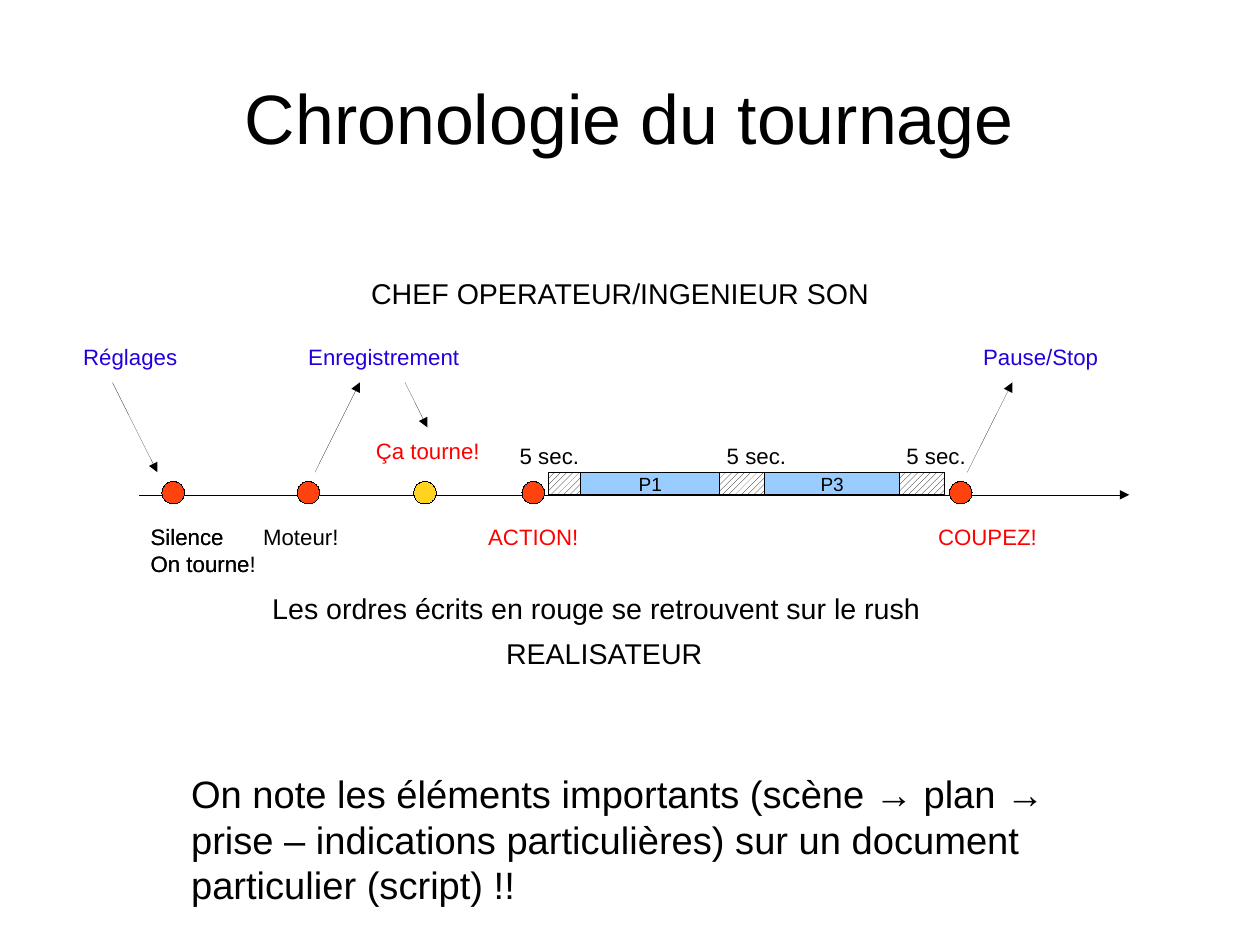
from pptx import Presentation
from pptx.dml.color import RGBColor
from pptx.enum.dml import MSO_PATTERN
from pptx.enum.shapes import MSO_CONNECTOR, MSO_SHAPE
from pptx.enum.text import MSO_ANCHOR, PP_ALIGN
from pptx.oxml.ns import qn
from pptx.util import Pt
from lxml import etree

COLORS = {
    "black": "000000",
    "white": "FFFFFF",
    "red": "FF0000",
    "blue": "2300DC",
    "take": "99CCFF",
    "order": "FF420E",
    "rolling": "FFD320",
}
RGB = {name: RGBColor.from_string(value) for name, value in COLORS.items()}

prs = Presentation()
prs.slide_width, prs.slide_height = Pt(793.7), Pt(595.28)
s = prs.slides.add_slide(prs.slide_layouts[6])


def write(sp, text, size, color="black", **formats):
    """Fill a shape's text frame, one paragraph per line of text."""
    tf = sp.text_frame
    tf.word_wrap = True
    for name, value in formats.items():
        setattr(tf, name, value)
    tf.text = text
    for p in tf.paragraphs:
        for name, value in {"size": Pt(size), "name": "Arial"}.items():
            setattr(p.runs[0].font, name, value)
        p.runs[0].font.color.rgb = RGB[color]


def strip_style(sp):
    """Drop the theme style, which brings a shadow and a thicker line."""
    sp._element.remove(sp._element.find(qn("p:style")))
    sp.line.color.rgb = RGB["black"]


# Title
title = s.shapes.add_textbox(Pt(39.6), Pt(27.4), Pt(714.2), Pt(92.2))
margins = {f"margin_{side}": 0 for side in ("left", "top", "right", "bottom")}
write(title, "Chronologie du tournage", 44,
      vertical_anchor=MSO_ANCHOR.MIDDLE, **margins)
title.text_frame.paragraphs[0].alignment = PP_ALIGN.CENTER

# Time axis and arrows between orders and crew actions
AXIS_Y, BAR_TOP, ARROW_TOP = 311.7, 297.5, 240.9
arrows = [
    (87.8, AXIS_Y, 711.4, AXIS_Y),
    (198.4, BAR_TOP, 226.7, ARROW_TOP),
    (70.8, ARROW_TOP, 99.2, BAR_TOP),
    (255.1, ARROW_TOP, 269.2, 269.2),
    (609.3, BAR_TOP, 637.7, ARROW_TOP),
]
for ends in arrows:
    arrow = s.shapes.add_connector(MSO_CONNECTOR.STRAIGHT, *map(Pt, ends))
    strip_style(arrow)
    etree.SubElement(arrow.line._get_or_add_ln(), qn("a:tailEnd"), type="triangle")
    etree.SubElement(arrow._element.spPr, qn("a:effectLst"))

# Recorded bar: takes between hatched five-second margins
x = 345.5
for width, take in [(20.2, ""), (87.8, "P1"), (28.2, ""), (85, "P3"), (28.2, "")]:
    sp = s.shapes.add_shape(MSO_SHAPE.RECTANGLE, Pt(x), Pt(BAR_TOP),
                            Pt(width), Pt(AXIS_Y - BAR_TOP))
    strip_style(sp)
    if take:
        sp.fill.solid()
        sp.fill.fore_color.rgb = RGB["take"]
        write(sp, take, 12, vertical_anchor=MSO_ANCHOR.MIDDLE)
        sp.text_frame.paragraphs[0].alignment = PP_ALIGN.CENTER
    else:
        sp.fill.patterned()
        sp.fill.pattern = MSO_PATTERN.WIDE_UPWARD_DIAGONAL
        sp.fill.fore_color.rgb = RGB["black"]
        sp.fill.back_color.rgb = RGB["white"]
    x += width

# Order markers
for left, color in [(102, "order"), (187.1, "order"), (260.6, "rolling"),
                    (328.8, "order"), (598.1, "order")]:
    dot = s.shapes.add_shape(MSO_SHAPE.OVAL, Pt(left), Pt(303.2), Pt(14.2), Pt(14.2))
    strip_style(dot)
    dot.fill.solid()
    dot.fill.fore_color.rgb = RGB[color]

# Labels: text, left, top, width, height, size, colour
CREW_Y, SECONDS_Y, ORDER_Y = 212.6, 274.9, 326
labels = [
    ("Réglages", 45.3, CREW_Y, 85, 23, 14, "blue"),
    ("Enregistrement", 187.1, CREW_Y, 110.9, 23, 14, "blue"),
    ("Pause/Stop", 612.2, CREW_Y, 96.5, 23, 14, "blue"),
    ("5 sec.", 320.3, SECONDS_Y, 56.9, 23, 14, "black"),
    ("5 sec.", 450.7, SECONDS_Y, 56.9, 23, 14, "black"),
    ("5 sec.", 563.9, SECONDS_Y, 56.9, 23, 14, "black"),
    ("Silence\nOn tourne!", 87.8, ORDER_Y, 85, 38.9, 14, "black"),
    ("Silence\nOn tourne", 87.8, ORDER_Y, 85, 38.9, 14, "black"),
    ("Moteur!", 158.6, ORDER_Y, 85, 23, 14, "black"),
    ("Ça tourne!", 229.6, 272, 85, 23, 14, "red"),
    ("ACTION!", 300.4, ORDER_Y, 85, 23, 14, "red"),
    ("COUPEZ!", 583.8, ORDER_Y, 85, 23, 14, "red"),
    ("CHEF OPERATEUR/INGENIEUR SON", 226.7, 170, 339.8, 27.4, 18, "black"),
    ("Les ordres écrits en rouge se retrouvent sur le rush",
     164.4, 368.5, 431.3, 27.4, 18, "black"),
    ("REALISATEUR", 311.7, 396.8, 141.8, 27.4, 18, "black"),
    ("On note les éléments importants (scène → plan → prise – indications "
     "particulières) sur un document particulier (script) !!",
     113.3, 481.6, 566.8, 87.1, 24, "black"),
]
for text, left, top, width, height, size, color in labels:
    box = s.shapes.add_textbox(Pt(left), Pt(top), Pt(width), Pt(height))
    write(box, text, size, color)

prs.save("out.pptx")
